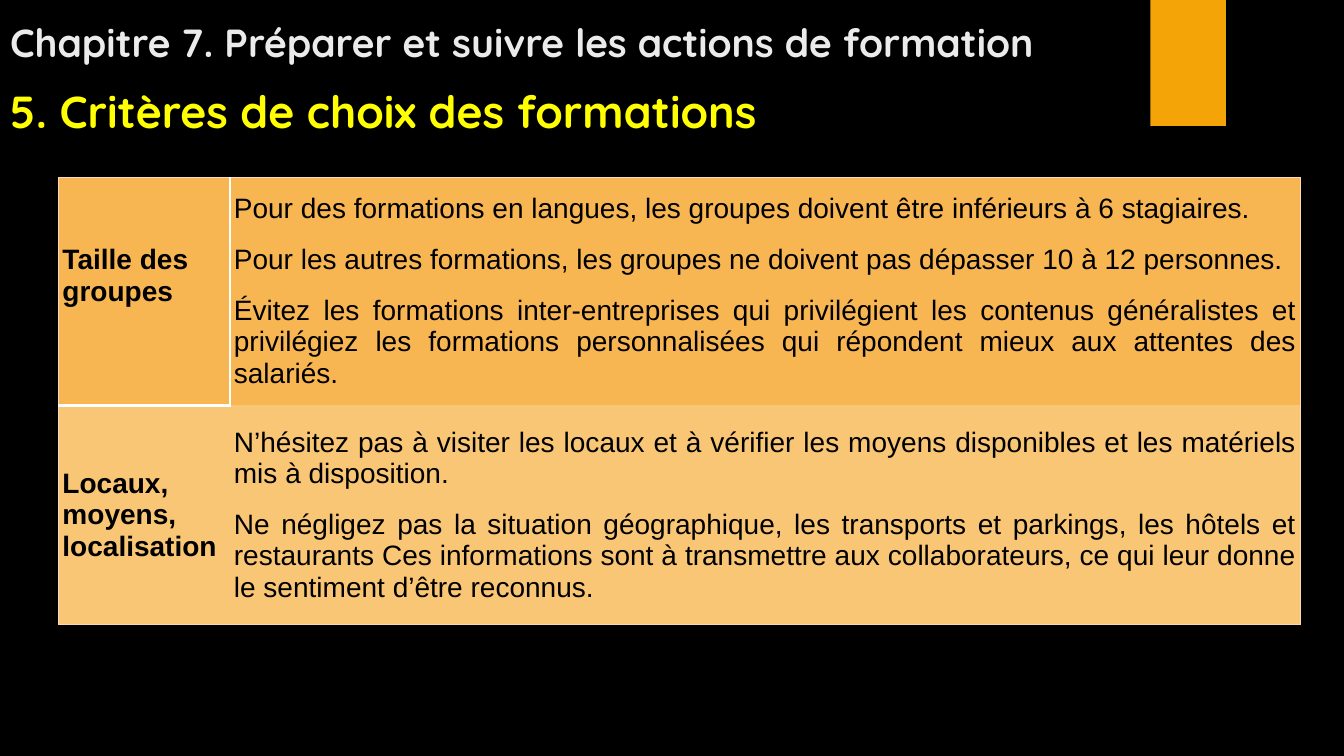
from lxml.etree import SubElement
from pptx import Presentation
from pptx.dml.color import RGBColor
from pptx.enum.shapes import MSO_SHAPE
from pptx.enum.text import MSO_ANCHOR, MSO_AUTO_SIZE, PP_ALIGN
from pptx.oxml import parse_xml
from pptx.oxml.ns import nsdecls, qn
from pptx.util import Inches, Pt

COLORS = {
    "background": "000000",
    "accent": "F5A408",
    "chapter": "EBEBEB",
    "section": "FFFF00",
    "text": "000000",
    "edge": "FAD8BD",
    "divider": "FFFFFF",
}
ROW_FILLS = ["F8B653", "F9C675"]
ROW_HEIGHTS = [2.26, 2.18]
COLUMN_WIDTHS = [1.7, 10.62]
NO_GRID_STYLE = "{2D5ABB26-0587-4C30-8999-92F81FD0307C}"
CRITERIA = [
    ("Taille des groupes", [
        "Pour des formations en langues, les groupes doivent être inférieurs à 6 stagiaires.",
        "Pour les autres formations, les groupes ne doivent pas dépasser 10 à 12 personnes.",
        "Évitez les formations inter-entreprises qui privilégient les contenus généralistes "
        "et privilégiez les formations personnalisées qui répondent mieux aux attentes des "
        "salariés.",
    ]),
    ("Locaux, moyens, localisation", [
        "N’hésitez pas à visiter les locaux et à vérifier les moyens disponibles et les "
        "matériels mis à disposition.",
        "Ne négligez pas la situation géographique, les transports et parkings, les hôtels "
        "et restaurants Ces informations sont à transmettre aux collaborateurs, ce qui leur "
        "donne le sentiment d’être reconnus.",
    ]),
]
EDGE = ("edge", 0.75)
BORDERS = [
    [{"L": EDGE, "R": ("divider", 1.5), "T": EDGE, "B": ("divider", 2.25)},
     {"L": ("divider", 1.5), "R": EDGE, "T": EDGE}],
    [{"L": EDGE, "T": ("divider", 2.25), "B": EDGE}, {"R": EDGE, "B": EDGE}],
]


def rgb(name):
    """Return the named colour."""
    return RGBColor.from_string(COLORS[name])


def style_runs(paragraph, font_name, size, color, bold):
    """Format every run of a paragraph."""
    for run in paragraph.runs:
        run.font.name = font_name
        run.font.size = Pt(size)
        run.font.bold = bold
        run.font.color.rgb = rgb(color)


def set_heading(heading, text, top, size, color):
    """Place and format a heading line."""
    heading.left, heading.top = Inches(0), Inches(top)
    heading.width, heading.height = Inches(12.9), Inches(0.71)
    frame = heading.text_frame
    frame.text = text
    frame.word_wrap = True
    frame.auto_size = MSO_AUTO_SIZE.NONE
    frame.vertical_anchor = MSO_ANCHOR.BOTTOM
    frame.paragraphs[0].alignment = PP_ALIGN.LEFT
    style_runs(frame.paragraphs[0], "Quicksand", size, color, True)


def add_accent_bar(slide):
    """Draw the orange bar at the top edge."""
    bar = slide.shapes.add_shape(
        MSO_SHAPE.RECTANGLE, Inches(11.41), Inches(0), Inches(0.75), Inches(1.25))
    bar.shadow.inherit = False
    bar.fill.solid()
    bar.fill.fore_color.rgb = rgb("accent")
    bar.line.fill.background()


def set_borders(cell, borders):
    """Draw the given sides of a cell."""
    properties = cell._tc.get_or_add_tcPr()
    sides = [side for side in "LRTB" if side in borders]
    for position, side in enumerate(sides):
        color, width = borders[side]
        line = parse_xml(f'<a:ln{side} {nsdecls("a")} w="{Pt(width)}"/>')
        fill = SubElement(line, qn("a:solidFill"))
        SubElement(fill, qn("a:srgbClr"), val=COLORS[color])
        properties.insert(position, line)


def fill_cell(cell, texts, fill, borders, is_label):
    """Write and format one table cell."""
    cell.fill.solid()
    cell.fill.fore_color.rgb = RGBColor.from_string(fill)
    set_borders(cell, borders)
    cell.vertical_anchor = MSO_ANCHOR.MIDDLE
    cell.margin_left = cell.margin_right = Inches(0.04)
    cell.margin_top = cell.margin_bottom = Inches(0)
    cell.text_frame.text = "\n".join(texts)
    for index, paragraph in enumerate(cell.text_frame.paragraphs):
        paragraph.alignment = PP_ALIGN.LEFT if is_label else PP_ALIGN.JUSTIFY
        if not is_label:
            paragraph.space_before = Pt(12 if index else 0)
            paragraph.space_after = Pt(2)
        style_runs(paragraph, "Arial", 20, "text", is_label)


def add_criteria_table(slide):
    """Add the table of selection criteria."""
    frame = slide.shapes.add_table(
        len(CRITERIA), len(COLUMN_WIDTHS), Inches(0.58), Inches(1.76),
        Inches(sum(COLUMN_WIDTHS)), Inches(sum(ROW_HEIGHTS)))
    table = frame.table
    table.first_row = table.horz_banding = False
    table._tbl.tblPr.find(qn("a:tableStyleId")).text = NO_GRID_STYLE
    for column, width in zip(table.columns, COLUMN_WIDTHS):
        column.width = Inches(width)
    for row, (label, advice) in enumerate(CRITERIA):
        table.rows[row].height = Inches(ROW_HEIGHTS[row])
        for column, texts in enumerate([[label], advice]):
            fill_cell(table.cell(row, column), texts, ROW_FILLS[row],
                      BORDERS[row][column], column == 0)
    table.cell(0, 0).margin_bottom = Inches(0.31)


def main():
    """Build the slide and save it."""
    deck = Presentation()
    deck.slide_width, deck.slide_height = Inches(13.33), Inches(7.5)
    slide = deck.slides.add_slide(deck.slide_layouts[5])
    slide.background.fill.solid()
    slide.background.fill.fore_color.rgb = rgb("background")
    add_accent_bar(slide)
    set_heading(slide.shapes.title,
                "Chapitre 7. Préparer et suivre les actions de formation",
                -0.01, 28, "chapter")
    section = slide.shapes.add_textbox(0, 0, 0, 0)
    set_heading(section, "5. Critères de choix des formations", 0.7, 32, "section")
    add_criteria_table(slide)
    deck.save("out.pptx")


if __name__ == "__main__":
    main()
